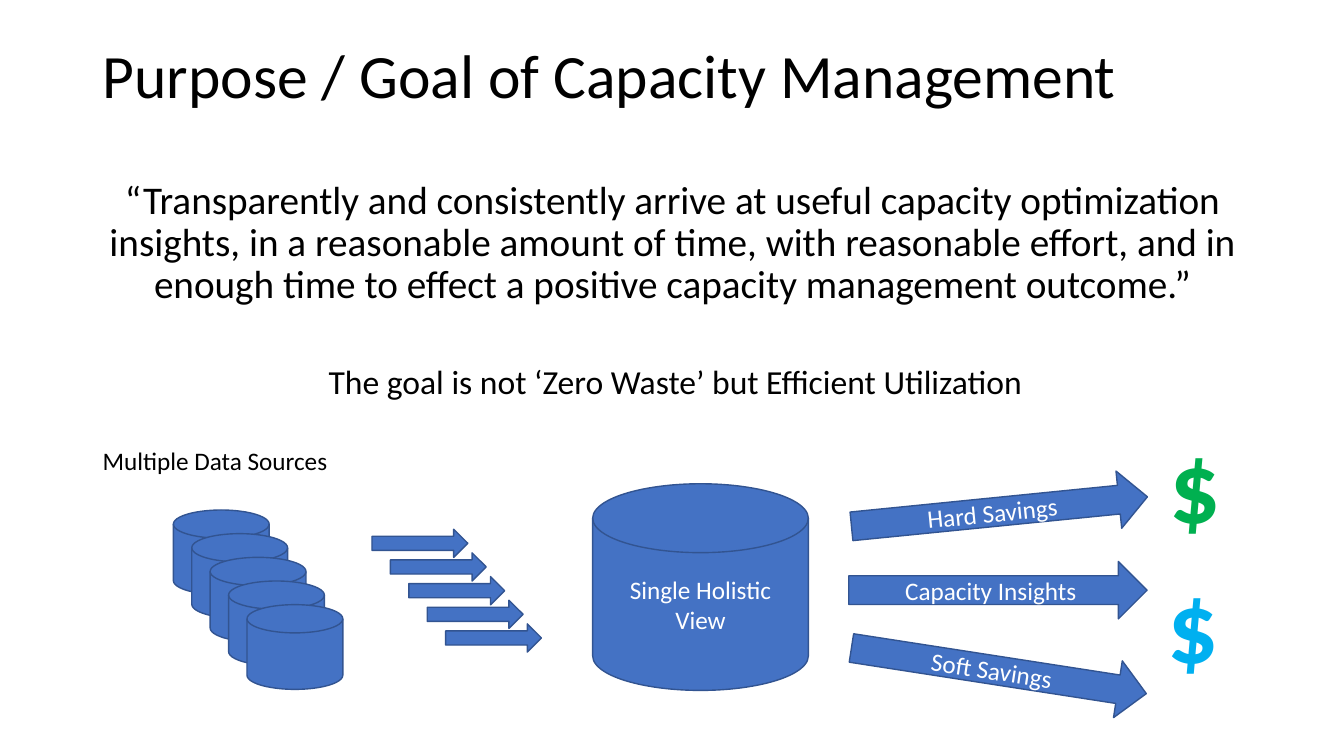
"""Builds the capacity management purpose slide."""
from dataclasses import dataclass

import pptx
import pptx.dml.color
import pptx.enum.shapes
import pptx.enum.text
import pptx.shapes.autoshape
import pptx.slide
import pptx.text.text
import pptx.util

RGBColor = pptx.dml.color.RGBColor
Preset = pptx.enum.shapes.MSO_SHAPE
Align = pptx.enum.text.PP_ALIGN
Anchor = pptx.enum.text.MSO_ANCHOR

BLUE = RGBColor(0x44, 0x72, 0xC4)
OUTLINE = RGBColor(0x32, 0x54, 0x91)
BLACK = RGBColor(0, 0, 0)
WHITE = RGBColor(0xFF, 0xFF, 0xFF)
GREEN = RGBColor(0, 0xB0, 0x50)
SKY = RGBColor(0, 0xB0, 0xF0)

SLIDE_WIDTH = pptx.util.Inches(13.33)
SLIDE_HEIGHT = pptx.util.Inches(7.5)
FONT = "Calibri"
SOURCE_COUNT = 5
STEP_X, STEP_Y = 1.37, 3.13


@dataclass(frozen=True)
class Area:
    """A place on the slide, in percent of its width and height."""
    left: float
    top: float
    width: float
    height: float

    def shifted(self, steps: int) -> "Area":
        """Return the area moved down the diagonal."""
        return Area(self.left + steps * STEP_X, self.top + steps * STEP_Y,
                    self.width, self.height)

    def lengths(self) -> tuple[int, int, int, int]:
        """Return the area in slide units."""
        return (round(self.left * SLIDE_WIDTH / 100),
                round(self.top * SLIDE_HEIGHT / 100),
                round(self.width * SLIDE_WIDTH / 100),
                round(self.height * SLIDE_HEIGHT / 100))


@dataclass(frozen=True)
class Label:
    """A free text with its format."""
    text: str
    area: Area
    size: float
    color: RGBColor = BLACK
    bold: bool = False
    align: Align = Align.LEFT
    spacing: float = 1.0
    wrap: bool = True


@dataclass(frozen=True)
class Figure:
    """A blue preset shape with optional text."""
    preset: Preset
    area: Area
    text: str = ""
    rotation: float = 0


LABELS = (
    Label("Purpose / Goal of Capacity Management",
          Area(6.9, 5.33, 86.25, 19.33), 44, spacing=0.9),
    Label("“Transparently and consistently arrive at useful capacity optimization "
          "insights, in a reasonable amount of time, with reasonable effort, and in "
          "enough time to effect a positive capacity management outcome.”",
          Area(6.9, 23.2, 86.25, 20.4), 28, align=Align.CENTER, spacing=0.9),
    Label("The goal is not ‘Zero Waste’ but Efficient Utilization",
          Area(23.4, 47.07, 53.7, 6.67), 24, align=Align.CENTER, wrap=False),
    Label("Multiple Data Sources", Area(6.9, 58.27, 24, 7.6), 18),
    Label("$", Area(86.25, 55.2, 6.9, 24.8), 72, GREEN, bold=True),
    Label("$", Area(86.1, 73.73, 6.22, 24.8), 72, SKY, bold=True),
)
FIRST_SOURCE = Figure(Preset.FLOWCHART_MAGNETIC_DISK, Area(12.9, 67.47, 7.13, 11.2))
FIRST_FEED = Figure(Preset.RIGHT_ARROW, Area(27.68, 70, 7.13, 3.73))
FIGURES = (
    Figure(Preset.FLOWCHART_MAGNETIC_DISK, Area(44.1, 64, 16.05, 27.33),
           "Single Holistic View"),
    Figure(Preset.RIGHT_ARROW, Area(63.3, 63.87, 22.13, 7.6), "Hard Savings", 354.3),
    Figure(Preset.RIGHT_ARROW, Area(63.22, 84.93, 22.2, 7.6), "Soft Savings", 8.8),
    Figure(Preset.RIGHT_ARROW, Area(63.15, 74.27, 22.2, 7.6), "Capacity Insights"),
)


def write_text(frame: pptx.text.text.TextFrame, text: str, *, size: float,
               color: RGBColor, bold: bool = False, align: Align = Align.LEFT,
               spacing: float = 1.0, wrap: bool = True,
               anchor: Anchor = Anchor.TOP) -> None:
    """Fill a text frame with one formatted paragraph."""
    frame.word_wrap = wrap
    frame.vertical_anchor = anchor
    paragraph = frame.paragraphs[0]
    paragraph.alignment = align
    paragraph.line_spacing = spacing
    run = paragraph.add_run()
    run.text = text
    run.font.name = FONT
    run.font.size = pptx.util.Pt(size)
    run.font.bold = bold
    run.font.color.rgb = color


def draw_label(slide: pptx.slide.Slide, label: Label) -> None:
    """Add a free text."""
    box = slide.shapes.add_textbox(*label.area.lengths())
    write_text(box.text_frame, label.text, size=label.size, color=label.color,
               bold=label.bold, align=label.align, spacing=label.spacing,
               wrap=label.wrap)


def draw_figure(slide: pptx.slide.Slide, figure: Figure, steps: int = 0) -> None:
    """Add a blue shape, moved down the diagonal by some steps."""
    shape = slide.shapes.add_shape(figure.preset, *figure.area.shifted(steps).lengths())
    shape.rotation = figure.rotation
    shape.shadow.inherit = False
    shape.fill.solid()
    shape.fill.fore_color.rgb = BLUE
    shape.line.color.rgb = OUTLINE
    shape.line.width = pptx.util.Pt(1)
    if figure.text:
        write_text(shape.text_frame, figure.text, size=18, color=WHITE,
                   align=Align.CENTER, anchor=Anchor.MIDDLE)


def main() -> None:
    """Build and save the slide."""
    deck = pptx.Presentation()
    deck.slide_width = SLIDE_WIDTH
    deck.slide_height = SLIDE_HEIGHT
    slide = deck.slides.add_slide(deck.slide_layouts[6])
    for cascade in (FIRST_SOURCE, FIRST_FEED):
        for steps in range(SOURCE_COUNT):
            draw_figure(slide, cascade, steps)
    for figure in FIGURES:
        draw_figure(slide, figure)
    for label in LABELS:
        draw_label(slide, label)
    deck.save("out.pptx")


if __name__ == "__main__":
    main()
